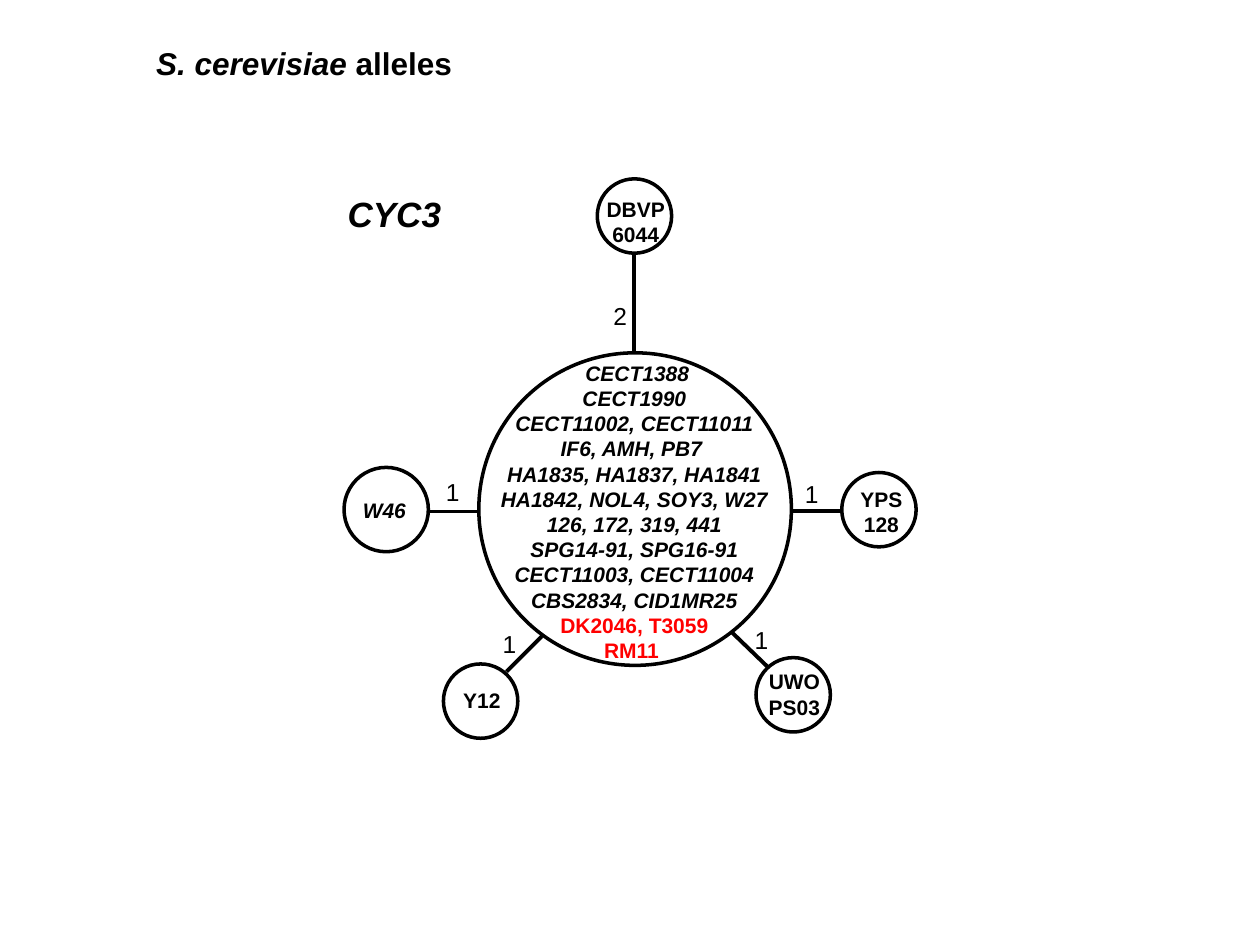
from lxml import etree
from pptx import Presentation
from pptx.dml.color import RGBColor
from pptx.enum import shapes, text
from pptx.oxml import ns
from pptx.util import Pt

HUE = {"ink": "000000", "paper": "FFFFFF", "mark": "FF0000"}

STRAINS = [
    " CECT1388",
    "CECT1990",
    "CECT11002, CECT11011",
    "IF6, AMH, PB7 ",
    "HA1835, HA1837, HA1841 HA1842, NOL4, SOY3, W27 126, 172, 319, 441",
    "SPG14-91, SPG16-91",
    "CECT11003, CECT11004",
    "CBS2834, CID1MR25",
]
MARKED = ["DK2046, T3059", "RM11 "]

# Circle left, top, size, fill; label left, top, width, height; lines; italic
NODES = [
    ((196.6, 267.1, 48.2, "paper"), (187.9, 280.8, 63.4, 21.6), ["W46"], True),
    ((432, 375.8, 42.5, None), (428.4, 378.7, 51.1, 36), ["UWOPS03"], False),
    ((341.3, 102.2, 42.5, None), (337.7, 108.7, 51.1, 36), ["DBVP6044"], False),
    ((253.4, 379.4, 42.5, None), (249.8, 389.5, 51.1, 21.6), ["Y12"], False),
    ((481, 270, 42.5, None), (478.1, 274.3, 51.1, 36), ["YPS", "128"], False),
]

# Line start and end; label left and top; number of changes
LINKS = [
    ((273.6, 292.3), (245.2, 292.3), (247.7, 269.3), "1"),
    ((418.3, 361.4), (438.5, 380.9), (424.1, 353.5), "1"),
    ((289.4, 383.8), (309.6, 363.6), (280.1, 355.7), "1"),
    ((362.2, 144.7), (362.2, 201.6), (343.4, 168.5), "2"),
    ((480.2, 291.8), (452.2, 291.8), (452.9, 270), "1"),
]


def color(name):
    return RGBColor.from_string(HUE[name])


def write(slide, box, lines, size=12, bold=True, italic=False, center=False):
    """Add a text box; each line is a list of (words, overrides) or a string."""
    frame = slide.shapes.add_textbox(*map(Pt, box)).text_frame
    frame.word_wrap = True
    frame.auto_size = text.MSO_AUTO_SIZE.SHAPE_TO_FIT_TEXT
    for i, line in enumerate(lines):
        para = frame.paragraphs[0] if i == 0 else frame.add_paragraph()
        if center:
            para.alignment = text.PP_ALIGN.CENTER
        for words, over in [(line, {})] if isinstance(line, str) else line:
            run = para.add_run()
            run.text = words
            font = run.font
            font.name, font.size, font.bold = "Arial", Pt(size), bold
            font.italic = over.get("italic", italic)
            font.color.rgb = color(over.get("hue", "ink"))


def circle(slide, left, top, size, fill):
    disc = slide.shapes.add_shape(
        shapes.MSO_SHAPE.OVAL, Pt(left), Pt(top), Pt(size), Pt(size))
    disc.shadow.inherit = False
    if fill:
        disc.fill.solid()
        disc.fill.fore_color.rgb = color(fill)
    else:
        disc.fill.background()
    disc.line.color.rgb = color("ink")
    disc.line.width = Pt(2)


def link(slide, start, end):
    line = slide.shapes.add_connector(
        shapes.MSO_CONNECTOR.STRAIGHT, *map(Pt, start + end))
    line.line.color.rgb = color("ink")
    line.line.width = Pt(2.25)
    etree.SubElement(line._element.spPr, ns.qn("a:effectLst"))


def main():
    deck = Presentation()
    deck.slide_width, deck.slide_height = Pt(720), Pt(540)
    slide = deck.slides.add_slide(deck.slide_layouts[6])

    title = [("S. cerevisiae ", {"italic": True}), ("alleles", {})]
    write(slide, (82.1, 21.6, 208.1, 28.8), [title], size=18)
    write(slide, (191.5, 106.6, 73.4, 31.7), ["CYC3"], size=20, italic=True)

    circle(slide, 273.6, 201.6, 178.6, "paper")
    marked = [[(name, {"italic": False, "hue": "mark"})] for name in MARKED]
    write(slide, (277.9, 202.3, 169.2, 181.4), STRAINS + marked,
          italic=True, center=True)

    for disc, box, lines, italic in NODES:
        circle(slide, *disc)
        write(slide, box, lines, italic=italic, center=True)
    for start, end, spot, count in LINKS:
        link(slide, start, end)
        write(slide, spot + (21.6, 24.5), [count], size=14, bold=False)

    deck.save("out.pptx")


if __name__ == "__main__":
    main()
